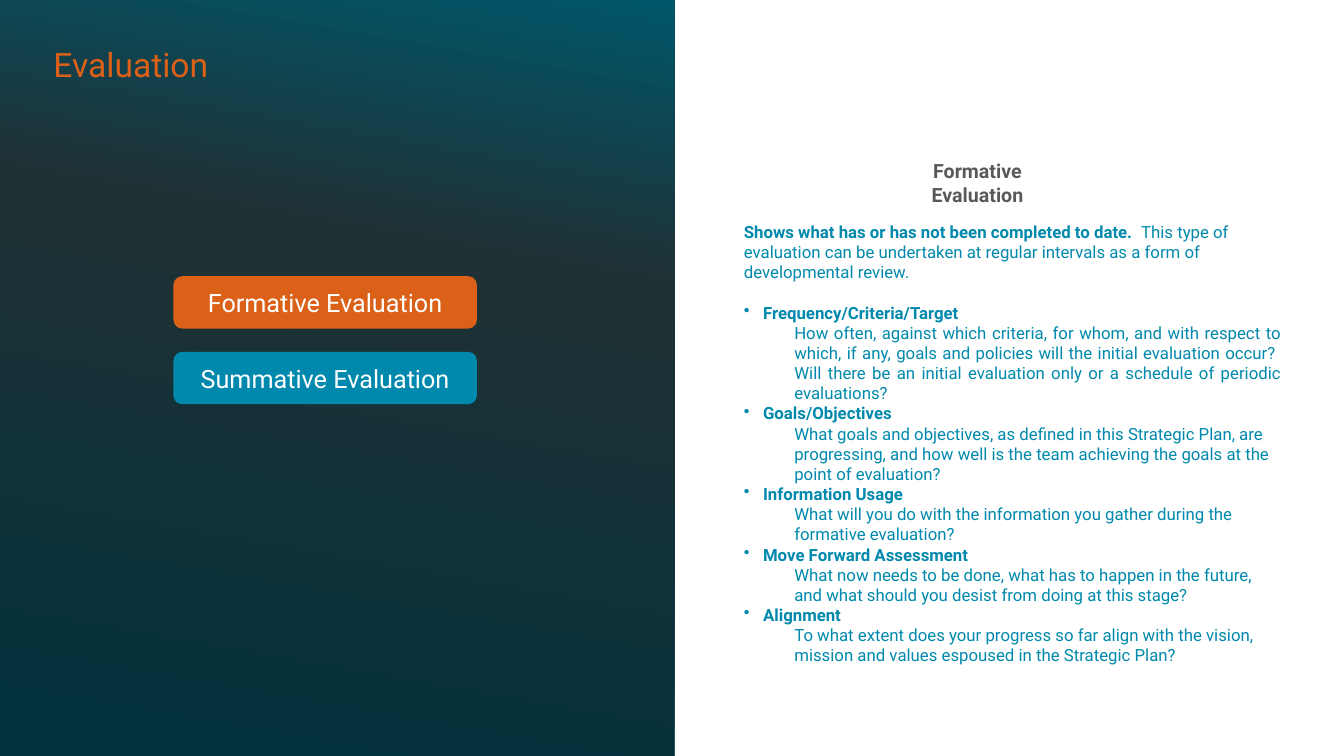
from copy import deepcopy

from lxml import etree
from pptx import Presentation
from pptx.dml.color import RGBColor
from pptx.enum.shapes import MSO_SHAPE
from pptx.enum.text import MSO_ANCHOR, MSO_AUTO_SIZE, PP_ALIGN
from pptx.oxml.ns import qn
from pptx.util import Inches, Pt

RECTANGLE, ROUNDED = MSO_SHAPE.RECTANGLE, MSO_SHAPE.ROUNDED_RECTANGLE
TOP, MIDDLE = MSO_ANCHOR.TOP, MSO_ANCHOR.MIDDLE
LEFT, CENTER, JUSTIFY = PP_ALIGN.LEFT, PP_ALIGN.CENTER, PP_ALIGN.JUSTIFY
NO_AUTOFIT = MSO_AUTO_SIZE.NONE

ORANGE = RGBColor(0xDB, 0x60, 0x18)
TEAL = RGBColor(0x00, 0x89, 0xAC)
GRAY = RGBColor(0x59, 0x59, 0x59)
WHITE = RGBColor(0xFF, 0xFF, 0xFF)
PANEL_STOPS = [
    (0, RGBColor(0x00, 0x31, 0x3C)),
    (0.67, RGBColor(0x20, 0x31, 0x35)),
    (1, RGBColor(0x00, 0x56, 0x69)),
]

BUTTONS = [("Formative Evaluation", ORANGE), ("Summative Evaluation", TEAL)]
INTRO = [
    ("Shows what has or has not been completed to date.  ", True),
    ("This type of evaluation can be undertaken at regular intervals "
     "as a form of developmental review.", False),
]
TOPICS = [
    ("Frequency/Criteria/Target",
     "How often, against which criteria, for whom, and with respect to which, if any, "
     "goals and policies will the initial evaluation occur?  Will there be an initial "
     "evaluation only or a schedule of periodic evaluations?", JUSTIFY),
    ("Goals/Objectives",
     "What goals and objectives, as defined in this Strategic Plan, are progressing, "
     "and how well is the team achieving the goals at the point of evaluation?", LEFT),
    ("Information Usage",
     "What will you do with the information you gather during the formative evaluation?",
     LEFT),
    ("Move Forward Assessment",
     "What now needs to be done, what has to happen in the future, and what should you "
     "desist from doing at this stage?", LEFT),
    ("Alignment",
     "To what extent does your progress so far align with the vision, mission and values "
     "espoused in the Strategic Plan?", LEFT),
]


def style(paragraph, size, color, bold=False, align=LEFT):
    paragraph.alignment = align
    font = paragraph.font
    font.name, font.size, font.bold = "Roboto", Pt(size), bold
    font.color.rgb = color


def indent(paragraph, margin, first_line, bullet=None):
    """Set the indents in inches and, if given, a teal bullet."""
    properties = paragraph._p.get_or_add_pPr()
    properties.set("marL", str(Inches(margin)))
    properties.set("indent", str(Inches(first_line)))
    if bullet:
        bullet_color = etree.SubElement(properties, qn("a:buClr"))
        etree.SubElement(bullet_color, qn("a:srgbClr")).set("val", str(TEAL))
        etree.SubElement(properties, qn("a:buChar")).set("char", bullet)


prs = Presentation()
prs.slide_width, prs.slide_height = Inches(13.33), Inches(7.5)
slide = prs.slides.add_slide(prs.slide_layouts[5])
shapes = slide.shapes
title = shapes.title

# Left panel, behind the title
panel = shapes.add_shape(RECTANGLE, 0, 0, Inches(6.69), prs.slide_height)
panel.shadow.inherit = False
panel.line.fill.background()
panel.fill.gradient()
panel.fill.gradient_angle = 80
stop_list = panel.element.spPr.find(".//" + qn("a:gsLst"))
stop_list.append(deepcopy(stop_list[-1]))
for stop, (position, color) in zip(panel.fill.gradient_stops, PANEL_STOPS):
    stop.position = position
    stop.color.rgb = color
title.element.addprevious(panel.element)

title.left, title.top = Inches(0.43), Inches(0.39)
title.width, title.height = Inches(4), Inches(0.5)
title.text_frame.text = "Evaluation"
title.text_frame.auto_size = NO_AUTOFIT
title.text_frame.vertical_anchor = TOP
style(title.text_frame.paragraphs[0], 24, ORANGE)

# Buttons
for row, (label, color) in enumerate(BUTTONS):
    button = shapes.add_shape(ROUNDED, Inches(1.72), Inches(2.74 + 0.75 * row),
                              Inches(3.01), Inches(0.52))
    button.shadow.inherit = False
    button.fill.solid()
    button.fill.fore_color.rgb = color
    button.line.fill.background()
    button.text_frame.text = label
    button.text_frame.vertical_anchor = MIDDLE
    style(button.text_frame.paragraphs[0], 18, WHITE, align=CENTER)

# Heading of the right side
heading = shapes.add_textbox(Inches(9.01), Inches(1.53), Inches(1.37), Inches(0.57)).text_frame
heading.word_wrap = True
heading.text = "Formative Evaluation"
style(heading.paragraphs[0], 14, GRAY, True, CENTER)

# Description
body = shapes.add_textbox(Inches(7.28), Inches(2.15), Inches(5.53), Inches(4.95)).text_frame
body.word_wrap = True
intro = body.paragraphs[0]
style(intro, 12, TEAL)
for text, bold in INTRO:
    run = intro.add_run()
    run.text = text
    run.font.bold = bold
intro.space_after = Pt(14.4)

for name, questions, align in TOPICS:
    topic = body.add_paragraph()
    topic.text = name
    indent(topic, 0.19, -0.19, "•")
    style(topic, 12, TEAL, True)

    detail = body.add_paragraph()
    detail.text = questions
    detail.level = 1
    indent(detail, 0.5, 0)
    style(detail, 12, TEAL, align=align)

prs.save("out.pptx")
